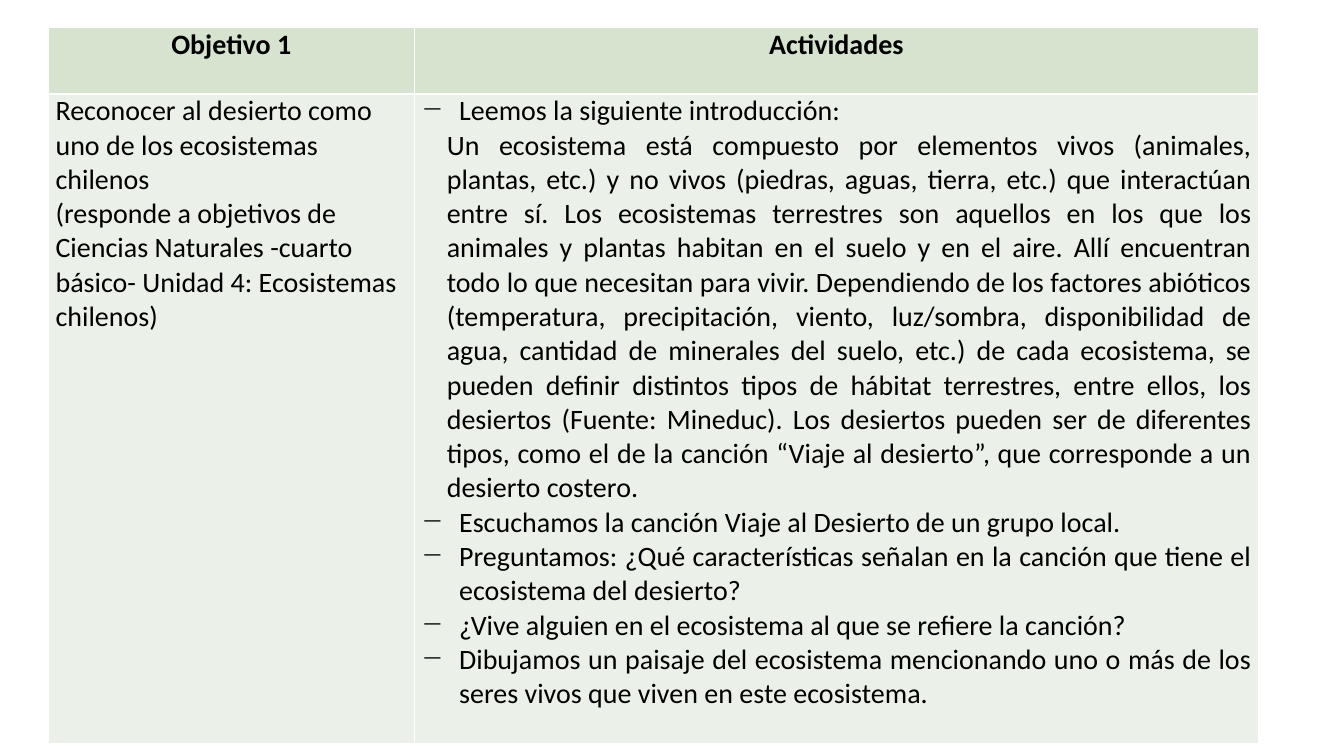
import lxml.etree
import pptx
import pptx.dml.color
import pptx.enum.text
import pptx.oxml
import pptx.oxml.ns
import pptx.util

Cm = pptx.util.Cm
Align = pptx.enum.text.PP_ALIGN
BLACK = pptx.dml.color.RGBColor(0x00, 0x00, 0x00)
WHITE = pptx.dml.color.RGBColor(0xFF, 0xFF, 0xFF)
HEADER_GREEN = pptx.dml.color.RGBColor(0xD5, 0xE3, 0xCF)
BODY_GREEN = pptx.dml.color.RGBColor(0xEB, 0xF1, 0xE9)

COLUMN_WIDTHS = (Cm(9.22), Cm(21.28))
ROW_HEIGHTS = (Cm(1.68), Cm(16.36))
HEADINGS = ("Objetivo 1", "Actividades")
OBJECTIVE = (
    "Reconocer al desierto como uno de los ecosistemas chilenos",
    "(responde a objetivos de Ciencias Naturales -cuarto básico- "
    "Unidad 4: Ecosistemas chilenos)",
)
READING = "Leemos la siguiente introducción: "
INTRODUCTION = (
    "Un ecosistema está compuesto por elementos vivos (animales, plantas, etc.) "
    "y no vivos (piedras, aguas, tierra, etc.) que interactúan entre sí. "
    "Los ecosistemas terrestres son aquellos en los que los animales y plantas "
    "habitan en el suelo y en el aire. Allí encuentran todo lo que necesitan "
    "para vivir. Dependiendo de los factores abióticos (temperatura, "
    "precipitación, viento, luz/sombra, disponibilidad de agua, cantidad de "
    "minerales del suelo, etc.) de cada ecosistema, se pueden definir distintos "
    "tipos de hábitat terrestres, entre ellos, los desiertos (Fuente: Mineduc). "
    "Los desiertos pueden ser de diferentes tipos, como el de la canción "
    "“Viaje al desierto”, que corresponde a un desierto costero. "
)
TASKS = (
    "Escuchamos la canción Viaje al Desierto de un grupo local.",
    "Preguntamos: ¿Qué características señalan en la canción que tiene el "
    "ecosistema del desierto?",
    "¿Vive alguien en el ecosistema al que se refiere la canción? ",
    "Dibujamos un paisaje del ecosistema mencionando uno o más de los seres "
    "vivos que viven en este ecosistema.",
)


def add_text(frame, text, bold=False, align=Align.LEFT, left=0, hanging=0, bullet=None):
    """Write one formatted paragraph, filling the frame's first one if unused."""
    first = frame.paragraphs[0]
    para = frame.add_paragraph() if first.runs else first
    para.alignment = align
    span = para.add_run()
    span.text = text
    span.font.name = "Calibri"
    span.font.size = pptx.util.Pt(20)
    span.font.bold = bold
    span.font.color.rgb = BLACK
    properties = para._p.get_or_add_pPr()
    properties.set("marL", str(left))
    properties.set("indent", str(-hanging))
    if bullet:
        mark = lxml.etree.SubElement(properties, pptx.oxml.ns.qn("a:buChar"))
        mark.set("char", bullet)


def format_cell(cell, color):
    """Give a cell its insets, white borders and fill."""
    cell.margin_left = cell.margin_right = Cm(0.18)
    cell.margin_top = cell.margin_bottom = 0
    properties = cell._tc.get_or_add_tcPr()
    for side in ("lnL", "lnR", "lnT", "lnB"):
        properties.append(pptx.oxml.parse_xml(
            f'<a:{side} {pptx.oxml.ns.nsdecls("a")} w="{pptx.util.Pt(1)}">'
            f'<a:solidFill><a:srgbClr val="{WHITE}"/></a:solidFill></a:{side}>'
        ))
    cell.fill.solid()
    cell.fill.fore_color.rgb = color


def fill_activities(frame):
    """Write the dashed activities and the introduction below the first."""
    dashed = dict(align=Align.JUSTIFY, left=Cm(0.95), hanging=Cm(0.95), bullet="−")
    add_text(frame, READING, **dashed)
    add_text(frame, INTRODUCTION, align=Align.JUSTIFY, left=Cm(0.64))
    for task in TASKS:
        add_text(frame, task, **dashed)


def add_plan_table(page, left, top):
    """Place the table of objective and activities at the given corner."""
    table = page.shapes.add_table(
        2, 2, left, top, sum(COLUMN_WIDTHS), sum(ROW_HEIGHTS)
    ).table
    for column, width in zip(table.columns, COLUMN_WIDTHS):
        column.width = width
    for row, height, color in zip(table.rows, ROW_HEIGHTS, (HEADER_GREEN, BODY_GREEN)):
        row.height = height
        for cell in row.cells:
            format_cell(cell, color)
    for cell, heading in zip(table.rows[0].cells, HEADINGS):
        add_text(cell.text_frame, heading, bold=True, align=Align.CENTER)
    for text in OBJECTIVE:
        add_text(table.cell(1, 0).text_frame, text)
    fill_activities(table.cell(1, 1).text_frame)


def main():
    """Build and save the deck."""
    deck = pptx.Presentation()
    deck.slide_width = Cm(33.87)
    deck.slide_height = Cm(19.05)
    page = deck.slides.add_slide(deck.slide_layouts[6])
    add_plan_table(page, Cm(1.22), Cm(0.69))
    deck.save("out.pptx")


if __name__ == "__main__":
    main()
